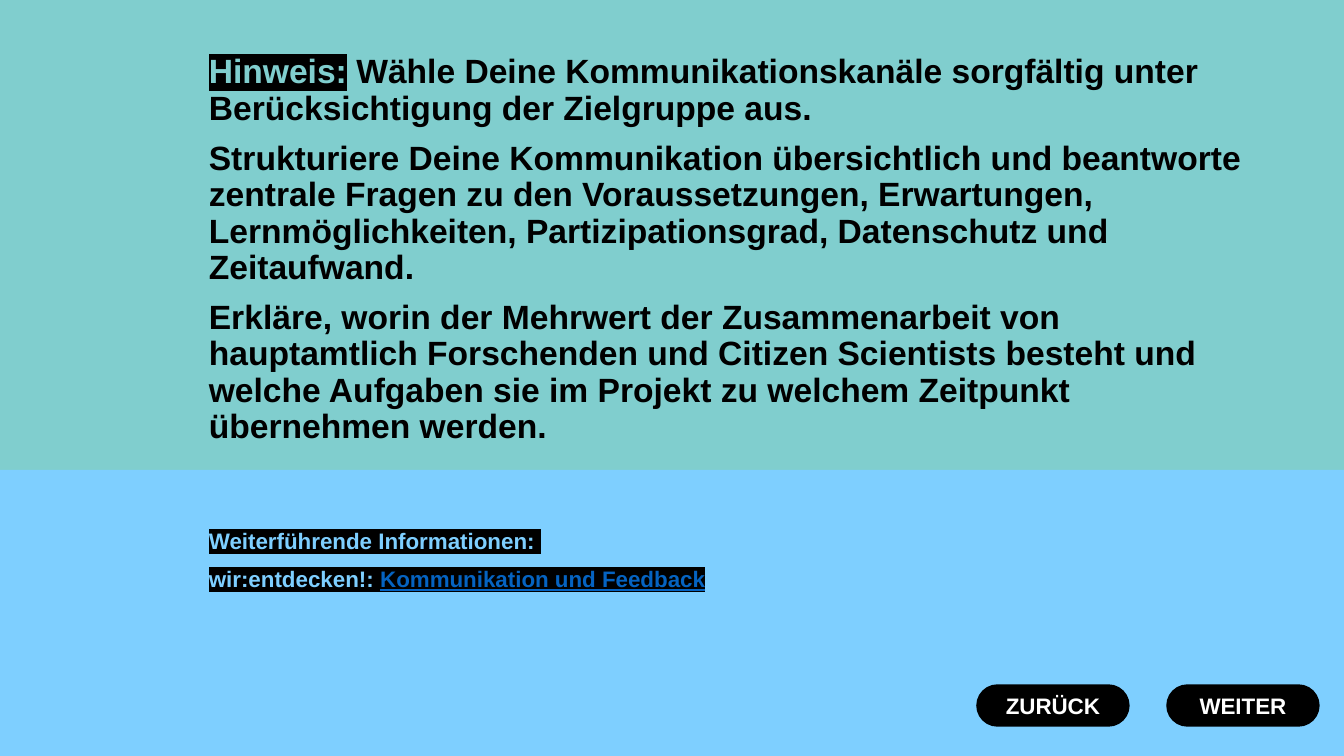
"""Build a slide with advice on communication, further reading and two buttons."""
from dataclasses import dataclass

from lxml.etree import Element, SubElement
from pptx import Presentation
from pptx.dml.color import RGBColor
from pptx.enum.shapes import MSO_SHAPE
from pptx.enum.text import MSO_ANCHOR, PP_ALIGN
from pptx.oxml.ns import qn
from pptx.shapes.autoshape import Shape
from pptx.slide import Slide
from pptx.text.text import _Paragraph
from pptx.util import Emu, Pt

HUES = {"teal": "80CECE", "sky": "7ECFFF", "black": "000000", "white": "FFFFFF", "link": "0563C1"}
WIDE, HIGH = 1344, 756


@dataclass(frozen=True)
class Bit:
    text: str
    hue: str = "black"
    mark: bool = False
    line: bool = False


@dataclass(frozen=True)
class Block:
    top: int
    high: int
    size: int
    paras: list[list[Bit]]


@dataclass(frozen=True)
class Button:
    left: int
    text: str


BLOCKS = [
    Block(50, 419, 24, [
        [Bit("Hinweis:", "teal", True),
         Bit(" Wähle Deine Kommunikationskanäle sorgfältig unter "
             "Berücksichtigung der Zielgruppe aus.")],
        [Bit("Strukturiere Deine Kommunikation übersichtlich und beantworte "
             "zentrale Fragen zu den Voraussetzungen, Erwartungen, "
             "Lernmöglichkeiten, Partizipationsgrad, Datenschutz und Zeitaufwand.")],
        [Bit("Erkläre, worin der Mehrwert der Zusammenarbeit von "
             "hauptamtlich Forschenden und Citizen Scientists besteht und "
             "welche Aufgaben sie im Projekt zu welchem Zeitpunkt übernehmen werden.")],
    ]),
    Block(525, 157, 16, [
        [Bit("Weiterführende Informationen: ", "sky", True)],
        [Bit("wir:entdecken!: ", "sky", True),
         Bit("Kommunikation und Feedback", "link", True, True)],
    ]),
]
BUTTONS = [Button(1167, "WEITER"), Button(977, "ZURÜCK")]


def px(num: int) -> Emu:
    """Turn px into EMU."""
    return Emu(round(num * 914400 / 100.8))


def tint(name: str) -> RGBColor:
    """Look up a colour."""
    return RGBColor.from_string(HUES[name])


def add_bit(para: _Paragraph, bit: Bit, size: int) -> None:
    """Add one bold run, with its marker and underline if set."""
    run = para.add_run()
    run.text = bit.text
    font = run.font
    font.name, font.size, font.bold = "Arial", Pt(size), True
    font.color.rgb = tint(bit.hue)
    if bit.line:
        font.underline = True
    if bit.mark:
        mark = Element(qn("a:highlight"))
        SubElement(mark, qn("a:srgbClr"), val=HUES["black"])
        run._r.get_or_add_rPr().find(qn("a:solidFill")).addnext(mark)


def add_block(slide: Slide, block: Block) -> None:
    """Add a text box with its paragraphs."""
    box = slide.shapes.add_textbox(px(199), px(block.top), px(1053), px(block.high))
    frame = box.text_frame
    frame.word_wrap = True
    for idx, bits in enumerate(block.paras):
        para = frame.add_paragraph() if idx else frame.paragraphs[0]
        para.line_spacing = 0.9
        para.space_before = Pt(10 if idx else 0)
        for bit in bits:
            add_bit(para, bit, block.size)


def add_form(slide: Slide, kind: MSO_SHAPE, left: int, top: int,
             wide: int, high: int, hue: str) -> Shape:
    """Add a flat filled shape without outline."""
    form = slide.shapes.add_shape(kind, px(left), px(top), px(wide), px(high))
    form.shadow.inherit = False
    form.fill.solid()
    form.fill.fore_color.rgb = tint(hue)
    form.line.fill.background()
    return form


def add_button(slide: Slide, button: Button) -> None:
    """Add a pill with a centred label."""
    pill = add_form(slide, MSO_SHAPE.ROUNDED_RECTANGLE, button.left, 685, 152, 41, "black")
    pill.adjustments[0] = 0.5
    pill.line.color.rgb = tint("black")
    pill.line.width = Pt(1)
    frame = pill.text_frame
    frame.vertical_anchor = MSO_ANCHOR.MIDDLE
    para = frame.paragraphs[0]
    para.alignment = PP_ALIGN.CENTER
    add_bit(para, Bit(button.text, "white"), 16)


def main() -> None:
    """Draw the slide and save it."""
    deck = Presentation()
    deck.slide_width, deck.slide_height = px(WIDE), px(HIGH)
    slide = deck.slides.add_slide(deck.slide_layouts[6])
    back = slide.background.fill
    back.solid()
    back.fore_color.rgb = tint("teal")
    add_form(slide, MSO_SHAPE.RECTANGLE, 0, 470, WIDE, HIGH - 470, "sky")
    for block in BLOCKS:
        add_block(slide, block)
    for button in BUTTONS:
        add_button(slide, button)
    deck.save("out.pptx")


if __name__ == "__main__":
    main()
